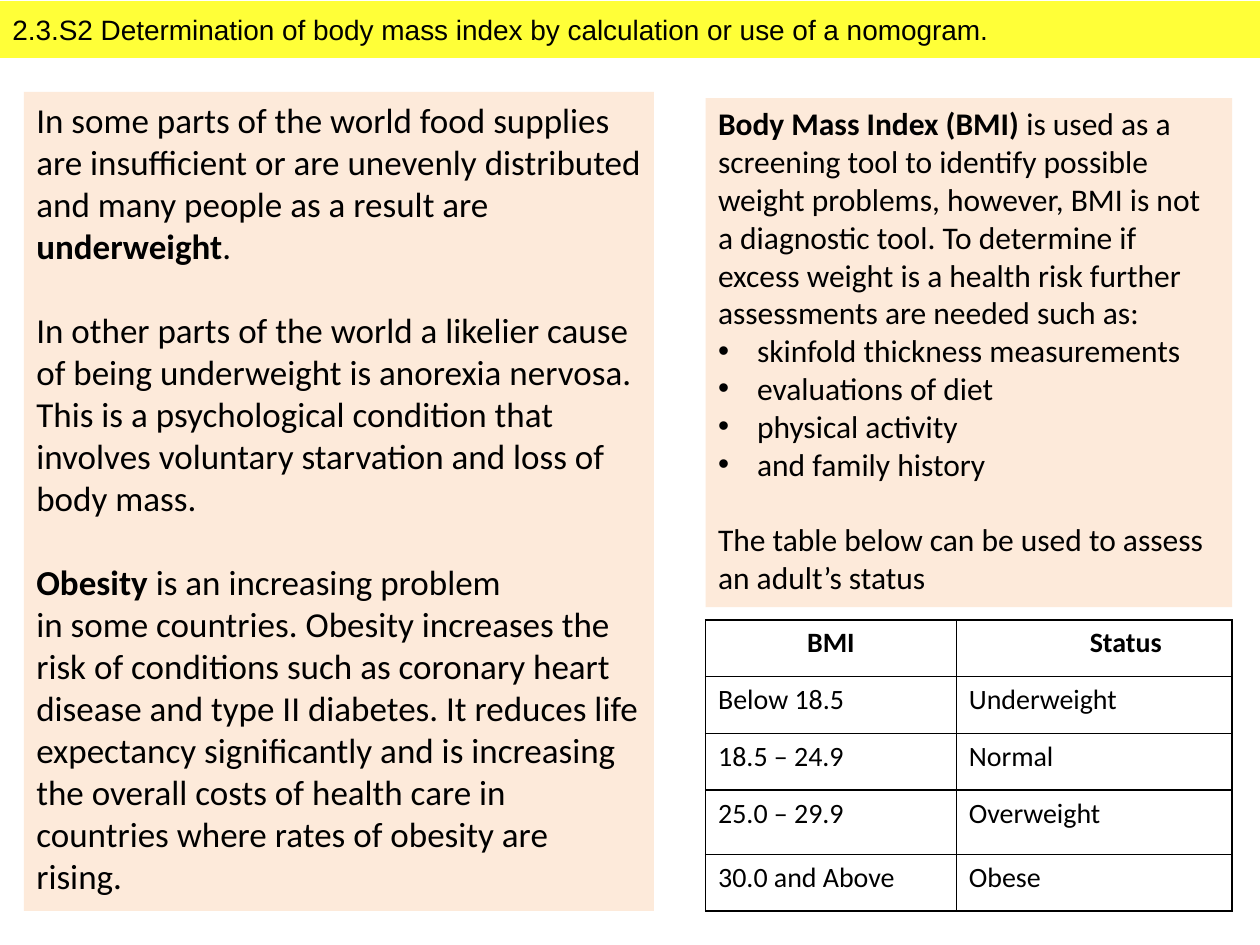
from lxml import etree
from pptx import Presentation
from pptx import util as u
from pptx.dml.color import RGBColor
from pptx.enum import shapes, text
from pptx.oxml import ns

THEME = {
    "banner": "FFFF00", "banner_alpha": 78, "panel": "FDEADA", "cell": "FFFFFF", "ink": "000000",
    "heading_font": "Arial", "body_font": "Calibri",
    "small": 16, "medium": 18, "large": 20, "border": 1,
}

presentation = Presentation()
presentation.slide_width, presentation.slide_height = u.Inches(10), u.Inches(7.5)
slide = presentation.slides.add_slide(presentation.slide_layouts[6])
column = presentation.slide_width / 100
row = presentation.slide_height / 75


def write_text(paragraph, words, size, font=THEME["body_font"], align=text.PP_ALIGN.LEFT,
               before=0, bullet=False):
    paragraph.alignment = align
    paragraph.space_before = u.Pt(before)
    if bullet:
        properties = paragraph._p.get_or_add_pPr()
        properties.set("marL", str(u.Inches(0.31)))
        properties.set("indent", str(-u.Inches(0.31)))
        etree.SubElement(properties, ns.qn("a:buFont"), typeface="Arial")
        etree.SubElement(properties, ns.qn("a:buChar"), char="•")
    for index, part in enumerate(words.split("*")):
        if part:
            run = paragraph.add_run()
            run.text = part
            run.font.size, run.font.name = u.Pt(size), font
            run.font.bold = index % 2 == 1
            run.font.color.rgb = RGBColor.from_string(THEME["ink"])


def add_panel(left, top, width, height, fill, anchor=text.MSO_ANCHOR.TOP):
    shape = slide.shapes.add_shape(shapes.MSO_SHAPE.RECTANGLE, round(left * column),
                                   round(top * row), round(width * column), round(height * row))
    shape.shadow.inherit = False
    shape.fill.solid()
    shape.fill.fore_color.rgb = RGBColor.from_string(fill)
    shape.line.fill.background()
    shape.text_frame.word_wrap = True
    shape.text_frame.vertical_anchor = anchor
    return shape


banner = add_panel(0, 0.1, 100, 4.5, THEME["banner"], text.MSO_ANCHOR.MIDDLE)
banner_color = banner.fill._xPr.find(".//" + ns.qn("a:srgbClr"))
etree.SubElement(banner_color, ns.qn("a:alpha"), val=str(THEME["banner_alpha"] * 1000))
write_text(banner.text_frame.paragraphs[0],
           "2.3.S2 Determination of body mass index by calculation or use of a nomogram.",
           size=THEME["small"], font=THEME["heading_font"])

bmi_paragraphs = [
    ("*Body Mass Index (BMI) *is used as a screening tool to identify possible weight problems, "
     "however, BMI is not a diagnostic tool. To determine if excess weight is a health risk "
     "further assessments are needed such as:", {}),
    ("skinfold thickness measurements", {"bullet": True}),
    ("evaluations of diet", {"bullet": True}),
    ("physical activity", {"bullet": True}),
    ("and family history", {"bullet": True}),
    ("The table below can be used to assess an adult’s status", {"before": 21.6}),
]
weight_paragraphs = [
    ("In some parts of the world food supplies are insufficient or are unevenly distributed "
     "and many people as a result are *underweight*.", {}),
    ("In other parts of the world a likelier cause of being underweight is anorexia nervosa. "
     "This is a psychological condition that involves voluntary starvation and loss of "
     "body mass.", {"before": 24}),
    ("*Obesity *is an increasing problem", {"before": 24}),
    ("in some countries. Obesity increases the risk of conditions such as coronary heart "
     "disease and type II diabetes. It reduces life expectancy significantly and is increasing "
     "the overall costs of health care in countries where rates of obesity are rising.", {}),
]
panels = [
    ((56, 7.8, 41.8, 40.4), THEME["medium"], bmi_paragraphs),
    ((1.9, 7.3, 50, 65), THEME["large"], weight_paragraphs),
]
for place, size, paragraphs in panels:
    frame = add_panel(*place, THEME["panel"]).text_frame
    for index, (words, options) in enumerate(paragraphs):
        paragraph = frame.add_paragraph() if index else frame.paragraphs[0]
        write_text(paragraph, words, size=size, **options)

status_rows = [
    ("*BMI*", "*Status*"),
    ("Below 18.5", "Underweight"),
    ("18.5 – 24.9", "Normal"),
    ("25.0 – 29.9", "Overweight"),
    ("30.0 and Above", "Obese"),
]
table = slide.shapes.add_table(len(status_rows), 2, round(56 * column), round(49.2 * row),
                               round(41.8 * column), round(23.1 * row)).table
for table_column, width in zip(table.columns, (19.9, 21.9)):
    table_column.width = round(width * column)
for table_row, height in zip(table.rows, (4.5, 4.5, 4.5, 5.1, 4.5)):
    table_row.height = round(height * row)
for row_index, values in enumerate(status_rows):
    for column_index, value in enumerate(values):
        cell = table.cell(row_index, column_index)
        header = row_index == 0
        write_text(cell.text_frame.paragraphs[0], value, size=THEME["small"],
                   align=text.PP_ALIGN.CENTER if header else text.PP_ALIGN.LEFT)
        if header and column_index == 1:
            cell.margin_left = u.Inches(0.6)
        properties = cell._tc.get_or_add_tcPr()
        for side in ("lnL", "lnR", "lnT", "lnB"):
            line = etree.SubElement(properties, ns.qn("a:" + side), w=str(u.Pt(THEME["border"])))
            line_fill = etree.SubElement(line, ns.qn("a:solidFill"))
            etree.SubElement(line_fill, ns.qn("a:srgbClr"), val=THEME["ink"])
        cell.fill.solid()
        cell.fill.fore_color.rgb = RGBColor.from_string(THEME["cell"])

presentation.save("out.pptx")
